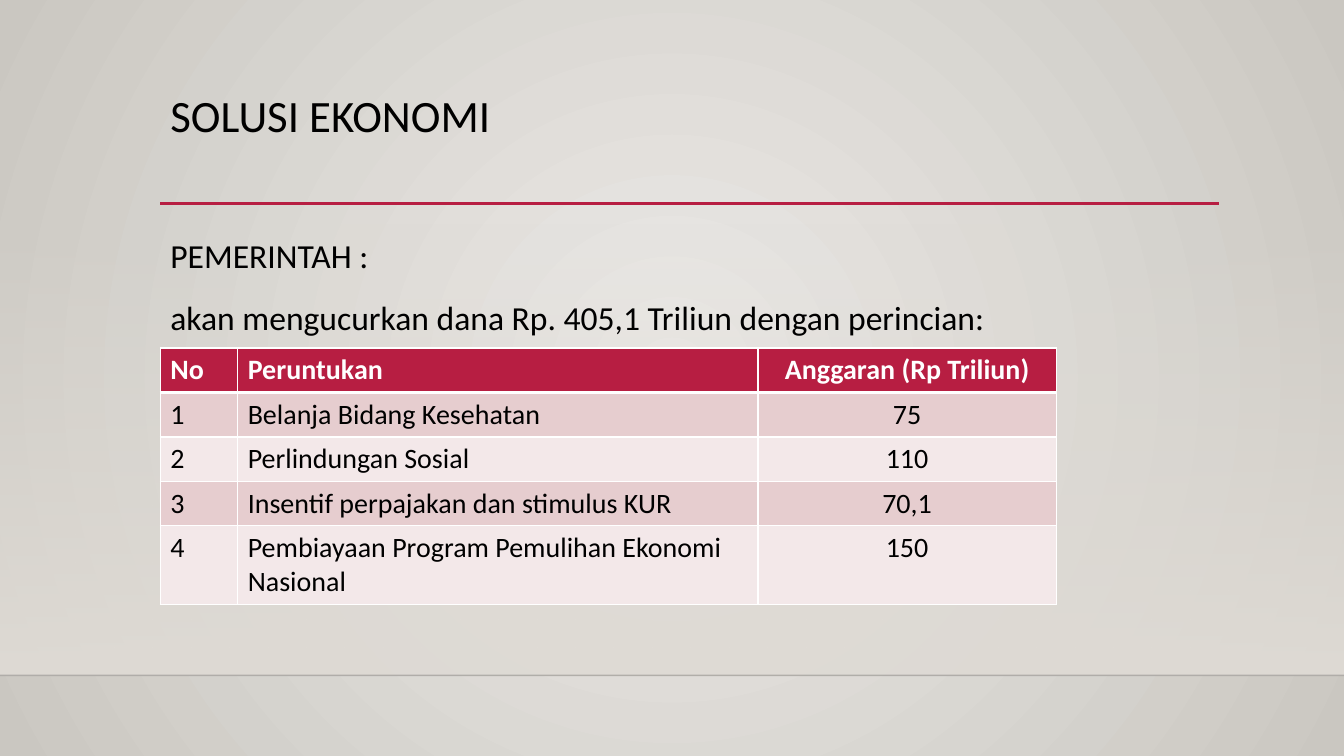
from dataclasses import dataclass

from pptx import Presentation
from pptx.dml.color import RGBColor
from pptx.enum.shapes import MSO_CONNECTOR, MSO_SHAPE
from pptx.enum.text import MSO_ANCHOR, MSO_AUTO_SIZE, PP_ALIGN
from pptx.oxml import parse_xml
from pptx.oxml.ns import nsdecls, qn
from pptx.oxml.xmlchemy import OxmlElement
from pptx.util import Cm, Pt

# Content
TITLE = "SOLUSI EKONOMI"
INTRO = ["PEMERINTAH :", "akan mengucurkan dana Rp. 405,1 Triliun dengan perincian:"]
BUDGET = [
    ("No", "Peruntukan", "Anggaran (Rp Triliun)"),
    ("1", "Belanja Bidang Kesehatan", "75"),
    ("2", "Perlindungan Sosial", "110"),
    ("3", "Insentif perpajakan dan stimulus KUR", "70,1"),
    ("4", "Pembiayaan Program Pemulihan Ekonomi Nasional", "150"),
]
ALIGNMENTS = (PP_ALIGN.LEFT, PP_ALIGN.LEFT, PP_ALIGN.CENTER)


@dataclass(frozen=True)
class Theme:
    font: str = "Calibri"
    title_size: int = 32
    body_size: int = 24
    table_size: int = 20
    text: str = "000000"
    white: str = "FFFFFF"
    accent: str = "B71E42"
    odd_row: str = "E6CDCF"
    even_row: str = "F3E8E9"
    glow: str = "ECEAE7"
    edge: str = "CAC7C1"
    wall: str = "DFDBD5"
    floor_line: str = "000001"


THEME = Theme()

# Layout in centimetres
WIDTH, HEIGHT = 33.87, 19.05
LEFT, TEXT_WIDTH = 4.04, 26.67
RULE_RIGHT, RULE_TOP = 30.73, 5.13
WALL_TOP, FLOOR_TOP = 5.61, 17.02
TITLE_TOP, TITLE_HEIGHT = 2.24, 2.92
BODY_TOP, BODY_HEIGHT = 5.59, 9.58
TABLE_TOP = 8.77
COLUMNS = (1.95, 13.11, 7.52)
ROWS = (1.12, 1.12, 1.12, 1.12, 1.97)


def colour(value):
    return RGBColor.from_string(value)


def set_alpha(element, percent):
    alpha = OxmlElement("a:alpha")
    alpha.set("val", str(percent * 1000))
    element.find(".//" + qn("a:srgbClr")).append(alpha)


def set_stops(fill, *values):
    fill.gradient()
    for stop, value in zip(fill.gradient_stops, values):
        stop.color.rgb = colour(value)


def style_paragraph(para, size, value, bold=False):
    for span in para.runs:
        span.font.name = THEME.font
        span.font.size = Pt(size)
        span.font.bold = bold
        span.font.color.rgb = colour(value)


def add_rule(page, left, right, top, value, width):
    rule = page.shapes.add_connector(
        MSO_CONNECTOR.STRAIGHT, Cm(left), Cm(top), Cm(right), Cm(top))
    rule.line.color.rgb = colour(value)
    rule.line.width = Pt(width)
    rule._element.spPr.append(OxmlElement("a:effectLst"))
    return rule


def add_backdrop(page):
    # Round glow behind everything
    set_stops(page.background.fill, THEME.glow, THEME.edge)
    linear = page.element.find(".//" + qn("a:lin"))
    linear.getparent().replace(linear, parse_xml(
        f'<a:path {nsdecls("a")} path="circle">'
        '<a:fillToRect l="50000" t="50000" r="50000" b="50000"/></a:path>'))
    # Wall fading in towards the floor
    wall = page.shapes.add_shape(
        MSO_SHAPE.RECTANGLE, 0, Cm(WALL_TOP), Cm(WIDTH), Cm(FLOOR_TOP - WALL_TOP))
    wall.shadow.inherit = False
    wall.line.fill.background()
    set_stops(wall.fill, THEME.wall, THEME.wall)
    wall.fill.gradient_angle = 270
    set_alpha(wall._element.spPr, 0)
    # Floor edge and title rule
    floor = add_rule(page, 0, WIDTH, FLOOR_TOP, THEME.floor_line, 1)
    set_alpha(floor._element.spPr, 20)
    add_rule(page, LEFT, RULE_RIGHT, RULE_TOP, THEME.accent, 2.5)


def fill_placeholder(page, box, top, height, lines, size, spacing):
    page.shapes._spTree.append(box._element)
    box.left, box.top = Cm(LEFT), Cm(top)
    box.width, box.height = Cm(TEXT_WIDTH), Cm(height)
    frame = box.text_frame
    frame.text = "\n".join(lines)
    frame.word_wrap = True
    frame.auto_size = MSO_AUTO_SIZE.NONE
    frame.vertical_anchor = MSO_ANCHOR.TOP
    for index, para in enumerate(frame.paragraphs):
        para.alignment = PP_ALIGN.LEFT
        para.line_spacing = spacing
        para.space_before = Pt(10 if index else 0)
        properties = para._p.get_or_add_pPr()
        properties.set("marL", "0")
        properties.set("indent", "0")
        properties.append(OxmlElement("a:buNone"))
        style_paragraph(para, size, THEME.text)


def set_borders(cell, bottom, top):
    properties = cell._tc.get_or_add_tcPr()
    widths = {"lnL": 1, "lnR": 1, "lnT": top, "lnB": bottom}
    for position, (side, width) in enumerate(widths.items()):
        properties.insert(position, parse_xml(
            f'<a:{side} {nsdecls("a")} w="{Pt(width)}"><a:solidFill>'
            f'<a:srgbClr val="{THEME.white}"/></a:solidFill></a:{side}>'))


def add_budget(page):
    table = page.shapes.add_table(
        len(ROWS), len(COLUMNS), Cm(LEFT), Cm(TABLE_TOP),
        Cm(sum(COLUMNS)), Cm(sum(ROWS))).table
    for column, width in zip(table.columns, COLUMNS):
        column.width = Cm(width)
    for number, (row, height, texts) in enumerate(zip(table.rows, ROWS, BUDGET)):
        row.height = Cm(height)
        header = number == 0
        band = THEME.accent if header else THEME.odd_row if number % 2 else THEME.even_row
        for cell, text, alignment in zip(row.cells, texts, ALIGNMENTS):
            cell.fill.solid()
            cell.fill.fore_color.rgb = colour(band)
            set_borders(cell, 3 if header else 1, 3 if number == 1 else 1)
            cell.text_frame.text = text
            para = cell.text_frame.paragraphs[0]
            para.alignment = alignment
            style_paragraph(para, THEME.table_size,
                            THEME.white if header else THEME.text, header)


def main():
    deck = Presentation()
    deck.slide_width, deck.slide_height = Cm(WIDTH), Cm(HEIGHT)
    page = deck.slides.add_slide(deck.slide_layouts[1])
    title, body = page.placeholders
    add_backdrop(page)
    fill_placeholder(page, title, TITLE_TOP, TITLE_HEIGHT, [TITLE], THEME.title_size, 0.9)
    fill_placeholder(page, body, BODY_TOP, BODY_HEIGHT, INTRO, THEME.body_size, 1.2)
    add_budget(page)
    deck.save("out.pptx")


if __name__ == "__main__":
    main()
